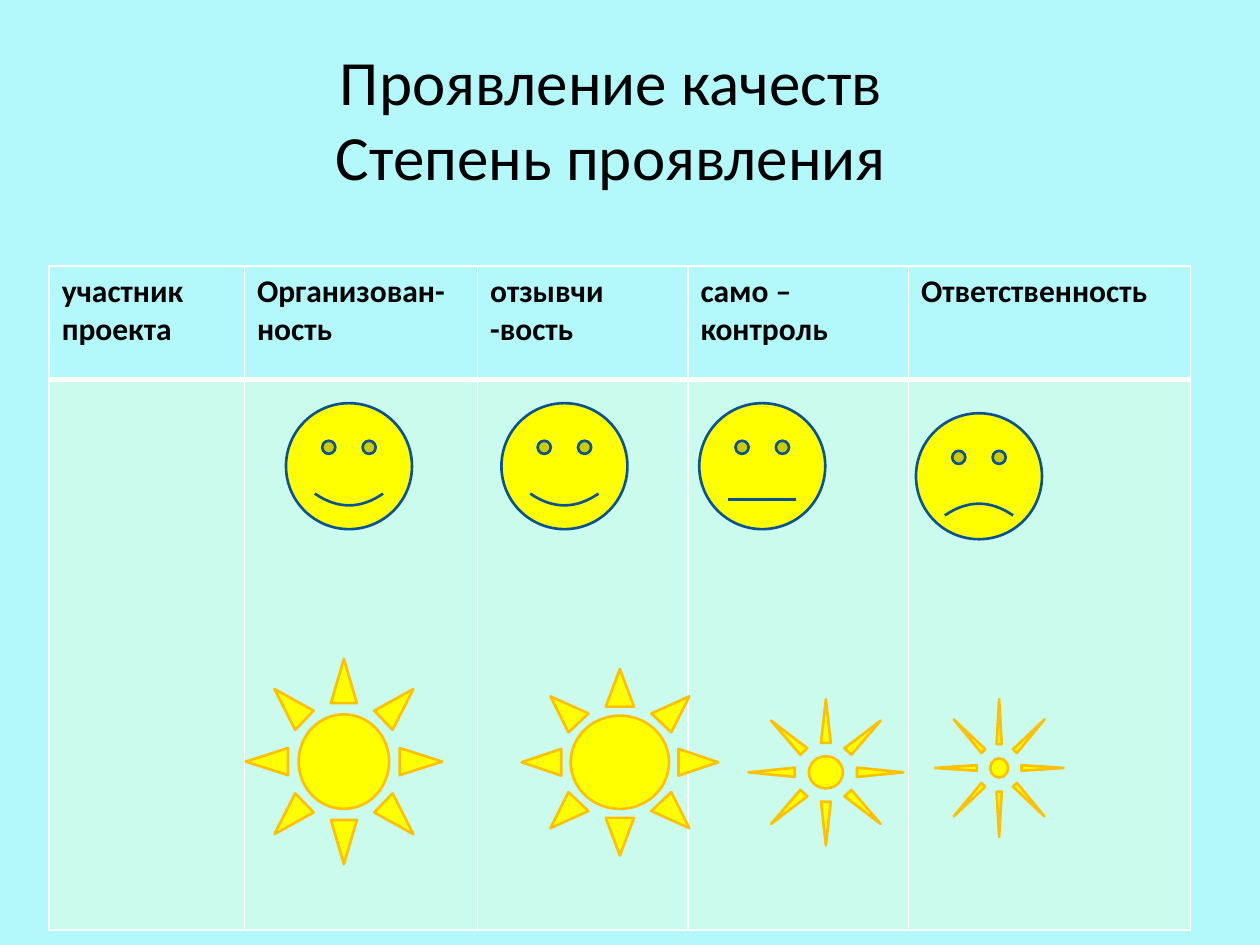
"""Build a slide that rates personal qualities with faces and suns."""
from typing import NamedTuple

from pptx import Presentation
from pptx.dml.color import RGBColor
from pptx.enum import shapes, text
from pptx.oxml import parse_xml
from pptx.oxml.ns import nsdecls
from pptx.util import Inches, Pt

FACE, SUN = shapes.MSO_SHAPE.SMILEY_FACE, shapes.MSO_SHAPE.SUN
BLUE, GOLD = "0B5292", "FFC000"
COLS = [1.55, 1.85, 1.67, 1.75, 2.24]
ROWS = [0.9, 4.37]
HEADS = ["участник проекта", "Организован-\nность", "отзывчи -вость",
         "само –\nконтроль", "Ответственность"]


class Mark(NamedTuple):
    kind: shapes.MSO_SHAPE
    line: str
    left: float
    top: float
    wide: float
    high: float
    adj: float


MARKS = [
    *(Mark(FACE, BLUE, left, top, 1, 1, adj) for left, top, adj in
      [(2.27, 3.2, 0.05), (3.98, 3.2, 0.05), (5.55, 3.2, 0), (7.27, 3.28, -0.05)]),
    Mark(SUN, GOLD, 1.95, 5.23, 1.56, 1.63, 0.27),
    Mark(SUN, GOLD, 5.94, 5.55, 1.23, 1.16, 0.39),
    Mark(SUN, GOLD, 7.42, 5.55, 1.02, 1.09, 0.43),
    Mark(SUN, GOLD, 4.14, 5.31, 1.56, 1.48, 0.25),
]


def paint(fill, tone: str) -> None:
    fill.solid()
    fill.fore_color.rgb = RGBColor.from_string(tone)


def style(para, size: int, bold: bool = False) -> None:
    font = para.font
    font.name, font.size, font.bold = "Calibri", Pt(size), bold
    font.color.rgb = RGBColor.from_string("000000")


def edge(cell, row: int) -> None:
    wide = {"L": 1, "R": 1, "T": 3 if row else 1, "B": 1 if row else 3}
    for side, size in wide.items():
        cell._tc.get_or_add_tcPr().append(parse_xml(
            f'<a:ln{side} {nsdecls("a")} w="{Pt(size)}"><a:solidFill>'
            f'<a:srgbClr val="FFFFFF"/></a:solidFill></a:ln{side}>'))


def add_title(slide) -> None:
    box = slide.shapes.add_textbox(Inches(1.02), Inches(0.31), Inches(7.66), Inches(1.25))
    frame = box.text_frame
    frame.word_wrap = True
    frame.vertical_anchor = text.MSO_ANCHOR.MIDDLE
    para = frame.paragraphs[0]
    para.text = "Проявление качеств\vСтепень проявления"
    para.alignment = text.PP_ALIGN.CENTER
    style(para, 36)


def add_grid(slide) -> None:
    table = slide.shapes.add_table(
        len(ROWS), len(COLS), Inches(0.39), Inches(2.11),
        Inches(sum(COLS)), Inches(sum(ROWS))).table
    table.horz_banding = False
    for col, wide in zip(table.columns, COLS):
        col.width = Inches(wide)
    for num, (row, high) in enumerate(zip(table.rows, ROWS)):
        row.height = Inches(high)
        for cell, head in zip(row.cells, HEADS):
            edge(cell, num)
            if num:
                paint(cell.fill, "CAFBED")
                continue
            cell.fill.background()
            cell.text = head
            for para in cell.text_frame.paragraphs:
                style(para, 18, True)


def add_mark(slide, mark: Mark) -> None:
    shape = slide.shapes.add_shape(
        mark.kind, Inches(mark.left), Inches(mark.top), Inches(mark.wide), Inches(mark.high))
    shape.shadow.inherit = False
    shape.adjustments[0] = mark.adj
    paint(shape.fill, "FFFF00")
    paint(shape.line.fill, mark.line)
    shape.line.width = Pt(1.5)


def main() -> None:
    deck = Presentation()
    deck.slide_width, deck.slide_height = Inches(10), Inches(7.5)
    slide = deck.slides.add_slide(deck.slide_layouts[6])
    paint(slide.background.fill, "B3F8FB")
    add_title(slide)
    add_grid(slide)
    for mark in MARKS:
        add_mark(slide, mark)
    deck.save("out.pptx")


if __name__ == "__main__":
    main()
